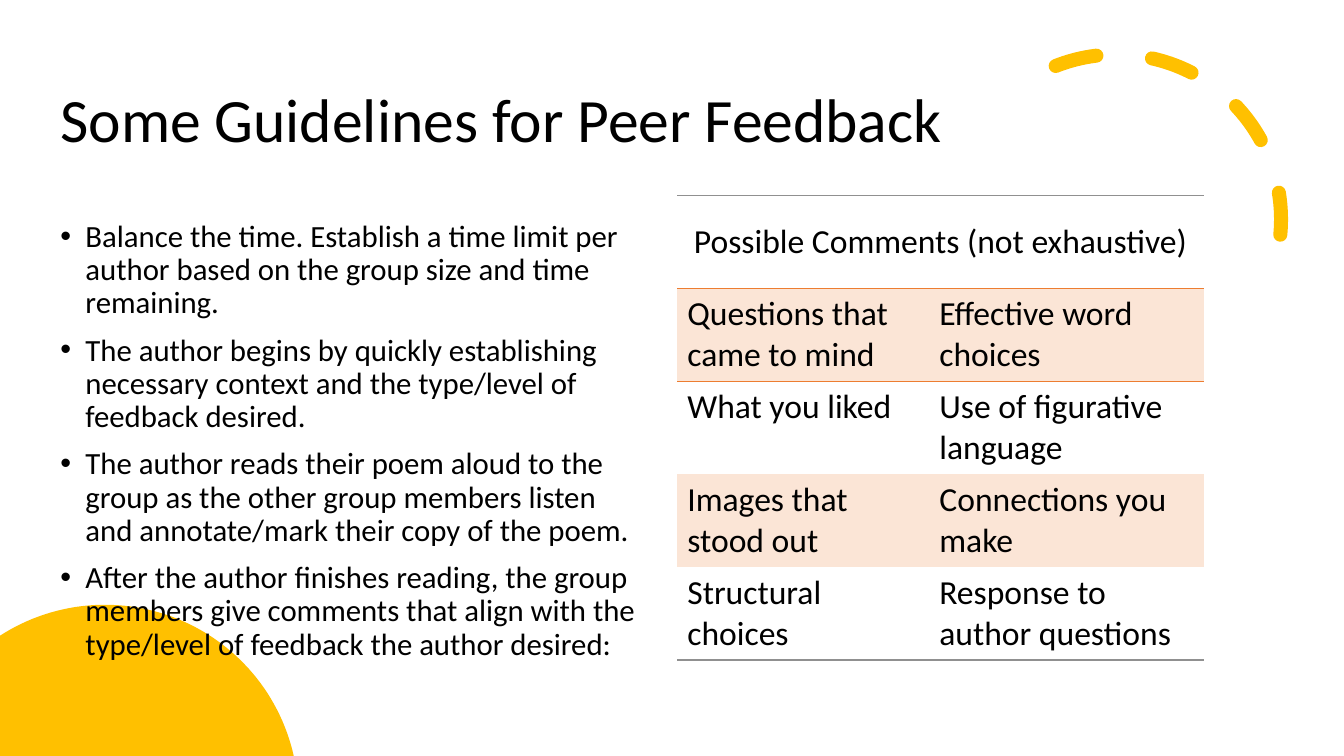
from math import acos, asin, cos, sin

from lxml.etree import SubElement
from pptx import Presentation
from pptx.dml.color import RGBColor
from pptx.enum.shapes import MSO_SHAPE
from pptx.enum.text import MSO_ANCHOR, PP_ALIGN
from pptx.oxml import parse_xml
from pptx.oxml.ns import nsdecls, qn
from pptx.util import Pt

GOLD = RGBColor(0xFF, 0xC0, 0x00)
BLACK = RGBColor(0x00, 0x00, 0x00)
PEACH = RGBColor(0xFB, 0xE5, 0xD6)
ORANGE = RGBColor(0xED, 0x7D, 0x31)
GREY = RGBColor(0x90, 0x90, 0x90)
PLAIN = "{2D5ABB26-0587-4C30-8999-92F81FD0307C}"  # no style, no grid

TITLE = "Some Guidelines for Peer Feedback"
STEPS = [
    "Balance the time. Establish a time limit per author based on the group "
    "size and time remaining.",
    "The author begins by quickly establishing necessary context and the "
    "type/level of feedback desired.",
    "The author reads their poem aloud to the group as the other group "
    "members listen and annotate/mark their copy of the poem.",
    "After the author finishes reading, the group members give comments that "
    "align with the type/level of feedback the author desired:",
]
HEAD = "Possible Comments (not exhaustive)"
ROWS = [
    ("Questions that came to mind", "Effective word choices"),
    ("What you liked", "Use of figurative language"),
    ("Images that stood out", "Connections you make"),
    ("Structural choices", "Response to author questions"),
]


def apply(item, form):
    for name, value in form.items():
        setattr(item, name, value)


class Deck:
    font = "Calibri"

    def __init__(self, wide, high):
        self.show = Presentation()
        apply(self.show, {"slide_width": Pt(wide), "slide_height": Pt(high)})
        self.slide = self.show.slides.add_slide(self.show.slide_layouts[6])
        self.shapes = self.slide.shapes

    def put(self, para, text, size, **form):
        run = para.add_run()
        run.text = text
        apply(run.font, {"name": self.font, "size": Pt(size)})
        run.font.color.rgb = BLACK
        apply(para, form)

    def text(self, box, lines, size, anchor, bullet=False, **form):
        frame = self.shapes.add_textbox(*map(Pt, box)).text_frame
        apply(frame, {"word_wrap": True, "vertical_anchor": anchor})
        for i, line in enumerate(lines):
            para = frame.add_paragraph() if i else frame.paragraphs[0]
            self.put(para, line, size, **form)
            if bullet:
                props = para._p.get_or_add_pPr()
                props.set("marL", str(Pt(18)))
                props.set("indent", str(Pt(-18)))
                SubElement(props, qn("a:buFont")).set("typeface", "Arial")
                SubElement(props, qn("a:buChar")).set("char", "•")

    def arc(self, box, turn, start, end):
        arc = self.shapes.add_shape(MSO_SHAPE.ARC, *map(Pt, box))
        arc.rotation = turn
        arc.shadow.inherit = False
        arc.adjustments[0], arc.adjustments[1] = start, end
        arc.fill.background()
        arc.line.color.rgb = GOLD
        arc.line.width = Pt(10)
        props = arc.element.spPr
        props.find(qn("a:xfrm")).set("flipH", "1")
        line = props.find(qn("a:ln"))
        line.set("cap", "rnd")
        SubElement(line, qn("a:prstDash")).set("val", "dash")
        SubElement(line, qn("a:round"))

    def disc(self, x, y, radius, floor, steps=60):
        """Part of a circle right of x = 0 and above the floor."""
        first, last = acos(-x / radius), asin((y - floor) / radius)
        turns = [first + (last - first) * i / steps for i in range(steps + 1)]
        rim = [(Pt(x + radius * cos(t)), Pt(y - radius * sin(t)))
               for t in turns]
        build = self.shapes.build_freeform(0, Pt(floor))
        build.add_line_segments(rim, close=True)
        disc = build.convert_to_shape()
        disc.shadow.inherit = False
        disc.fill.solid()
        disc.fill.fore_color.rgb = GOLD
        disc.line.fill.background()

    def edge(self, cell, side, color):
        props = cell._tc.get_or_add_tcPr()
        props.insert(0, parse_xml(
            f'<a:{side} {nsdecls("a")} w="{Pt(1)}"><a:solidFill>'
            f'<a:srgbClr val="{color}"/></a:solidFill></a:{side}>'))

    def table(self, box, cols, head, rows, size):
        frame = self.shapes.add_table(
            len(rows) + 1, len(cols), *map(Pt, box))
        grid = frame.table
        apply(grid, {"first_row": False, "horz_banding": False})
        grid._tbl.tblPr.find(qn("a:tableStyleId")).text = PLAIN
        for col, width in zip(grid.columns, cols):
            col.width = Pt(width)
        for row in grid.rows:
            row.height = Pt(box[3] / (len(rows) + 1))

        # Header across both columns
        top = grid.cell(0, 0)
        top.merge(grid.cell(0, len(cols) - 1))
        top.vertical_anchor = MSO_ANCHOR.MIDDLE
        top.fill.background()
        self.put(top.text_frame.paragraphs[0], head, size,
                 alignment=PP_ALIGN.CENTER)

        # Banded body
        for r, row in enumerate(rows, 1):
            for c, text in enumerate(row):
                cell = grid.cell(r, c)
                self.put(cell.text_frame.paragraphs[0], text, size)
                if r % 2:
                    cell.fill.solid()
                    cell.fill.fore_color.rgb = PEACH
                else:
                    cell.fill.background()

        # Rules above, below the header and at the foot
        for c in range(len(cols)):
            self.edge(grid.cell(0, c), "lnB", ORANGE)
            self.edge(grid.cell(0, c), "lnT", GREY)
            self.edge(grid.cell(1, c), "lnT", ORANGE)
            self.edge(grid.cell(len(rows), c), "lnB", GREY)


def main():
    deck = Deck(960, 540)
    # Decoration
    deck.arc((679.7, 38.9, 235.4, 235.4), 66.1, 144.42, 0)
    # Title
    deck.text((36, 35.3, 687.6, 104.4), [TITLE], 44, MSO_ANCHOR.MIDDLE,
              line_spacing=0.9)
    deck.disc(75, 570.2, 138.2, 540)
    # Guidelines
    deck.text((36, 154.1, 429.8, 329.8), STEPS, 22, MSO_ANCHOR.TOP,
              bullet=True, line_spacing=0.9, space_before=Pt(10))
    # Comments
    deck.table((483.8, 139.5, 376, 332), (180, 196), HEAD, ROWS, 24)
    deck.show.save("out.pptx")


if __name__ == "__main__":
    main()
